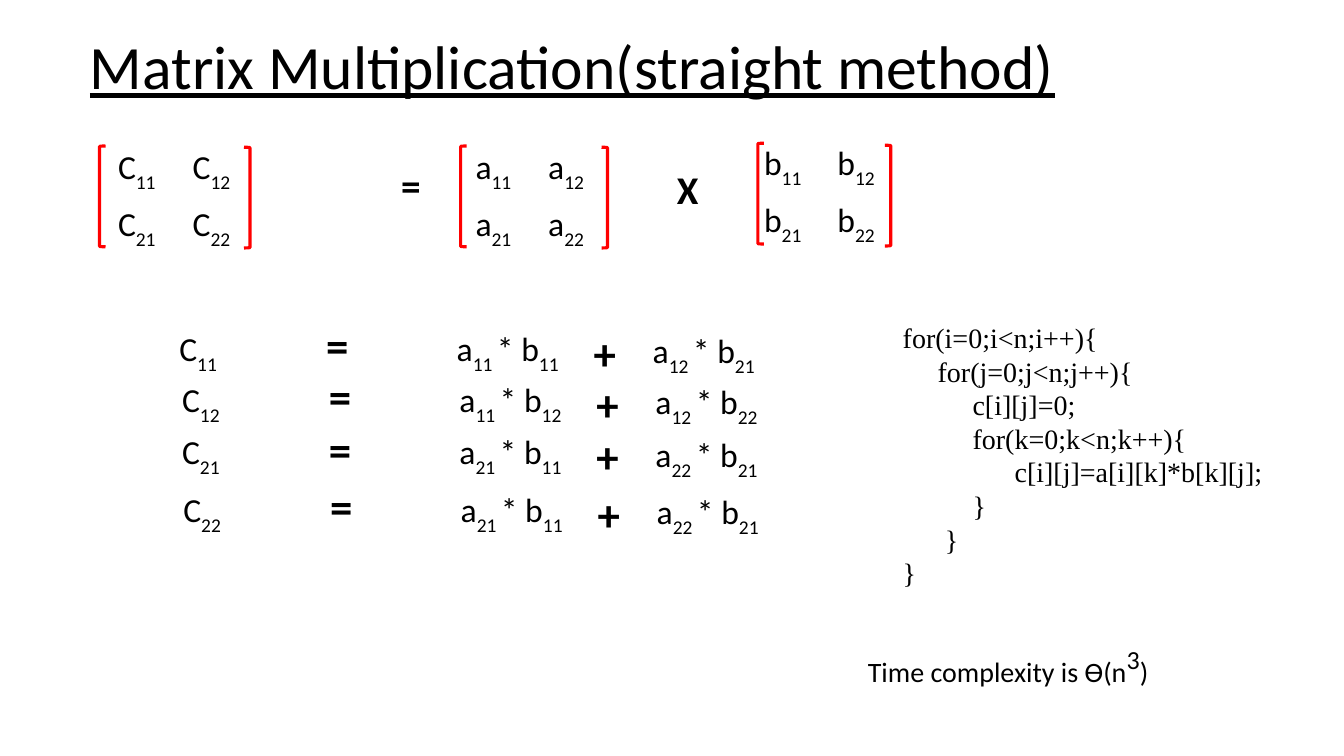
from pptx import Presentation
from pptx.dml.color import RGBColor
from pptx.enum.shapes import MSO_SHAPE
from pptx.enum.text import MSO_ANCHOR, MSO_AUTO_SIZE, PP_ALIGN
from pptx.util import Cm, Pt

BLACK = RGBColor(0, 0, 0)
RED = RGBColor(255, 0, 0)
LEFT_BRACKET = MSO_SHAPE.LEFT_BRACKET
RIGHT_BRACKET = MSO_SHAPE.RIGHT_BRACKET
MIDDLE = MSO_ANCHOR.MIDDLE
GROW = MSO_AUTO_SIZE.SHAPE_TO_FIT_TEXT
LEFT = PP_ALIGN.LEFT
TITLE_ONLY = 5

TITLE_FORMAT = {"name": "Calibri", "size": Pt(44), "underline": True}
TERM_FORMAT = {"name": "Calibri", "size": Pt(24)}
SIGN_FORMAT = {"name": "Calibri", "size": Pt(28), "bold": True}
ROW_SIGN_FORMAT = {"name": "Calibri", "size": Pt(32), "bold": True}
CODE_FORMAT = {"name": "Times New Roman", "size": Pt(20)}
NOTE_FORMAT = {"name": "Calibri", "size": Pt(20)}
POWER_FORMAT = {"name": "Calibri", "size": Pt(32)}

INDICES = (("11", "12"), ("21", "22"))
MATRICES = [
    ("C", (2.72, 3.58), (1.88, 1.88), 1.19, (2.51, 3.68), (6.15, 3.71)),
    ("a", (11.73, 3.58), (1.83, 1.83), 1.24, (11.61, 3.68), (15.16, 3.71)),
    ("b", (19.0, 3.48), (1.85, 1.91), 1.27, (19.1, 3.61), (22.3, 3.66)),
]
EQUATIONS = [
    (4.27, 8.13, "C|11", "a|11 |* b|11", "a|12 |* b|21"),
    (4.34, 9.42, "C|12", "a|11 |* b|12", "a|12 |* b|22"),
    (4.34, 10.74, "C|21", "a|21 |* b|11", "a|22 |* b|21"),
    (4.37, 12.19, "C|22", "a|21 |* b|11", "a|22 |* b|21"),
]
CODE_LINES = [
    (0, "for(i=0;i<n;i++){"),
    (0.88, "for(j=0;j<n;j++){"),
    (1.76, "c[i][j]=0;"),
    (1.76, "for(k=0;k<n;k++){"),
    (2.82, "c[i][j]=a[i][k]*b[k][j];"),
    (1.76, "}"),
    (1.06, "}"),
    (0, "}"),
]


def add_run(paragraph, text, font_format, baseline=0):
    run = paragraph.add_run()
    run.text = text
    for attribute, value in font_format.items():
        setattr(run.font, attribute, value)
    run.font.color.rgb = BLACK
    if baseline:
        run.font._element.set("baseline", str(baseline * 1000))


def write_term(paragraph, term, font_format=TERM_FORMAT):
    for position, part in enumerate(term.split("|")):
        add_run(paragraph, part, font_format, -30 if position % 2 else 0)


def add_text_frame(slide, left, top, width, height):
    box = slide.shapes.add_textbox(Cm(left), Cm(top), Cm(width), Cm(height))
    frame = box.text_frame
    frame.word_wrap = True
    frame.auto_size = GROW
    return frame


def add_term(slide, term, left, top, width, height, font_format=TERM_FORMAT):
    frame = add_text_frame(slide, left, top, width, height)
    write_term(frame.paragraphs[0], term, font_format)


def add_title(slide):
    title = slide.shapes.title
    title.left, title.top = Cm(2.01), Cm(0.48)
    title.width, title.height = Cm(29.21), Cm(2.54)
    title.text_frame.vertical_anchor = MIDDLE
    heading = title.text_frame.paragraphs[0]
    heading.alignment = LEFT
    heading.line_spacing = 0.9
    add_run(heading, "Matrix Multiplication(straight method)", TITLE_FORMAT)


def add_bracket(slide, kind, left, top):
    bracket = slide.shapes.add_shape(kind, Cm(left), Cm(top), Cm(0.15), Cm(2.54))
    bracket.shadow.inherit = False
    bracket.fill.background()
    bracket.line.color.rgb = RED
    bracket.line.width = Pt(2.25)


def add_matrix(slide, letter, corner, widths, row_height, opening, closing):
    left, top = corner
    matrix = slide.shapes.add_table(
        2, 2, Cm(left), Cm(top), Cm(sum(widths)), Cm(2 * row_height)
    ).table
    matrix.first_row = False
    matrix.horz_banding = False
    for column, width in zip(matrix.columns, widths):
        column.width = Cm(width)
    for row, row_indices in enumerate(INDICES):
        for column, index in enumerate(row_indices):
            entry = matrix.cell(row, column)
            entry.fill.background()
            write_term(entry.text_frame.paragraphs[0], f"{letter}|{index}")
    add_bracket(slide, LEFT_BRACKET, *opening)
    add_bracket(slide, RIGHT_BRACKET, *closing)


def add_equation(slide, left, top, result, first_product, second_product):
    add_term(slide, result, left, top, 1.7, 1.27)
    add_term(slide, "=", left + 3.7, top - 0.25, 1.09, 1.63, ROW_SIGN_FORMAT)
    add_term(slide, first_product, left + 6.99, top, 3.45, 1.27)
    add_term(slide, "+", left + 10.44, top - 0.05, 1.09, 1.63, ROW_SIGN_FORMAT)
    add_term(slide, second_product, left + 11.93, top + 0.06, 3.45, 1.27)


def add_code(slide):
    frame = add_text_frame(slide, 22.5, 7.95, 10.82, 7.09)
    for number, (indent, line) in enumerate(CODE_LINES):
        paragraph = frame.add_paragraph() if number else frame.paragraphs[0]
        paragraph._p.get_or_add_pPr().set("marL", str(Cm(indent)))
        add_run(paragraph, line, CODE_FORMAT)


def add_complexity(slide):
    frame = add_text_frame(slide, 21.62, 15.95, 10.82, 1.17)
    statement = frame.paragraphs[0]
    add_run(statement, "Time complexity is ϴ(n", NOTE_FORMAT)
    add_run(statement, "3", POWER_FORMAT, 30)
    add_run(statement, ")", NOTE_FORMAT)


def main():
    presentation = Presentation()
    presentation.slide_width = Cm(33.87)
    presentation.slide_height = Cm(19.05)
    slide = presentation.slides.add_slide(presentation.slide_layouts[TITLE_ONLY])
    add_title(slide)
    for matrix in MATRICES:
        add_matrix(slide, *matrix)
    add_term(slide, "X", 16.81, 4.04, 0.86, 1.45, SIGN_FORMAT)
    add_term(slide, "=", 9.86, 3.94, 0.86, 1.45, SIGN_FORMAT)
    for equation in EQUATIONS:
        add_equation(slide, *equation)
    add_code(slide)
    add_complexity(slide)
    presentation.save("out.pptx")


if __name__ == "__main__":
    main()
